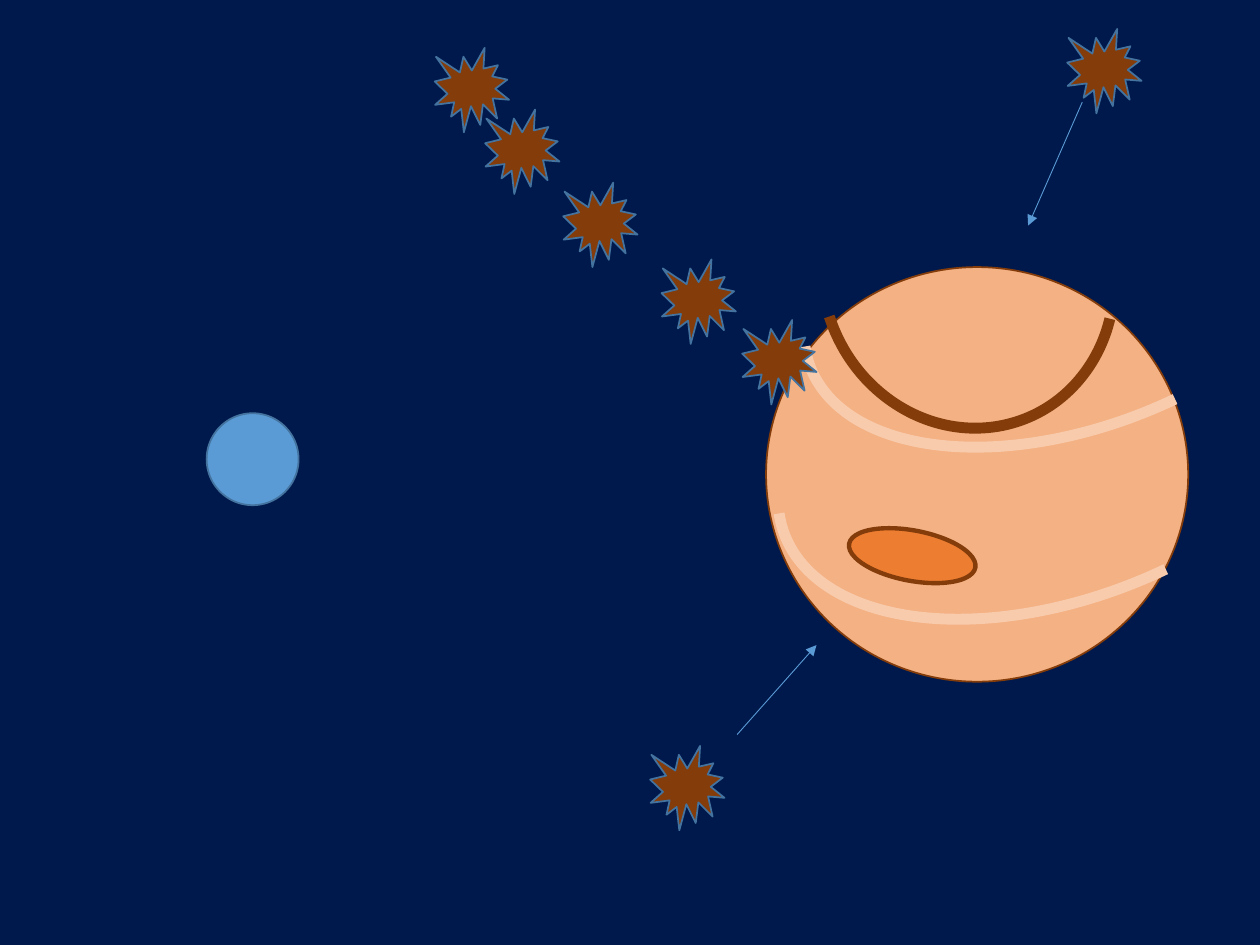
from pptx import Presentation
from pptx.dml.color import RGBColor as RGB
from pptx.enum.shapes import MSO_CONNECTOR as CONN, MSO_SHAPE as SHAPE
from pptx.oxml.ns import qn
from pptx.util import Inches, Pt
from lxml.etree import SubElement

THEME = {
    "space": "00194C", "planet": "F4B183", "brown": "843C0B", "spot": "ED7D31",
    "band": "F8CBAD", "blue": "5B9BD5", "edge": "43739E",
    "hair": 0.5, "thin": 1, "medium": 2.5, "thick": 6.25,
}
COLS, ROWS = 100, 75

prs = Presentation()
prs.slide_width, prs.slide_height = Inches(10), Inches(7.5)
col, row = prs.slide_width / COLS, prs.slide_height / ROWS
s = prs.slides.add_slide(prs.slide_layouts[6])
s.background.fill.solid()
s.background.fill.fore_color.rgb = RGB.from_string(THEME["space"])


def set_line(line, color, width):
    line.color.rgb = RGB.from_string(THEME[color])
    line.width = Pt(THEME[width])


def add(kind, x, y, w, h, fill, color, width, rot=0):
    sp = s.shapes.add_shape(kind, int(x * col), int(y * row), int(w * col), int(h * row))
    sp.shadow.inherit = False
    sp.rotation = rot
    if fill:
        sp.fill.solid()
        sp.fill.fore_color.rgb = RGB.from_string(THEME[fill])
    else:
        sp.fill.background()
    set_line(sp.line, color, width)
    return sp


add(SHAPE.OVAL, 60.8, 21.2, 33.5, 32.9, "planet", "brown", "thin")
add(SHAPE.OVAL, 16.4, 32.8, 7.3, 7.3, "blue", "edge", "thin")
add(SHAPE.OVAL, 67.3, 42.1, 10.2, 4, "spot", "brown", "medium", 10.7)

arcs = [
    (65.3, 9.3, 23, 24.8, "brown", 131.56),
    (62.7, 7.6, 46.4, 26.1, "band", 154.74),
    (60.6, 19.9, 48.4, 27.4, "band", 154.74),
]
for x, y, w, h, color, start in arcs:
    sp = add(SHAPE.ARC, x, y, w, h, None, color, "thick", 158.4)
    sp.adjustments[0], sp.adjustments[1] = start, 2.59

comets = [(34.5, 3.8), (38.5, 8.7), (44.7, 14.5), (52.5, 20.6),
          (58.9, 25.4), (51.6, 59.2), (84.7, 2.3)]
for x, y in comets:
    add(SHAPE.EXPLOSION1, x, y, 5.9, 6.7, "brown", "edge", "thin")

for x1, y1, x2, y2 in [(85.9, 8.1, 81.6, 17.9), (58.5, 58.3, 64.8, 51.2)]:
    arrow = s.shapes.add_connector(CONN.STRAIGHT, int(x1 * col), int(y1 * row),
                                   int(x2 * col), int(y2 * row))
    set_line(arrow.line, "blue", "hair")
    SubElement(arrow.line._get_or_add_ln(), qn("a:tailEnd"), type="triangle")
    SubElement(arrow._element.spPr, qn("a:effectLst"))

prs.save("out.pptx")
